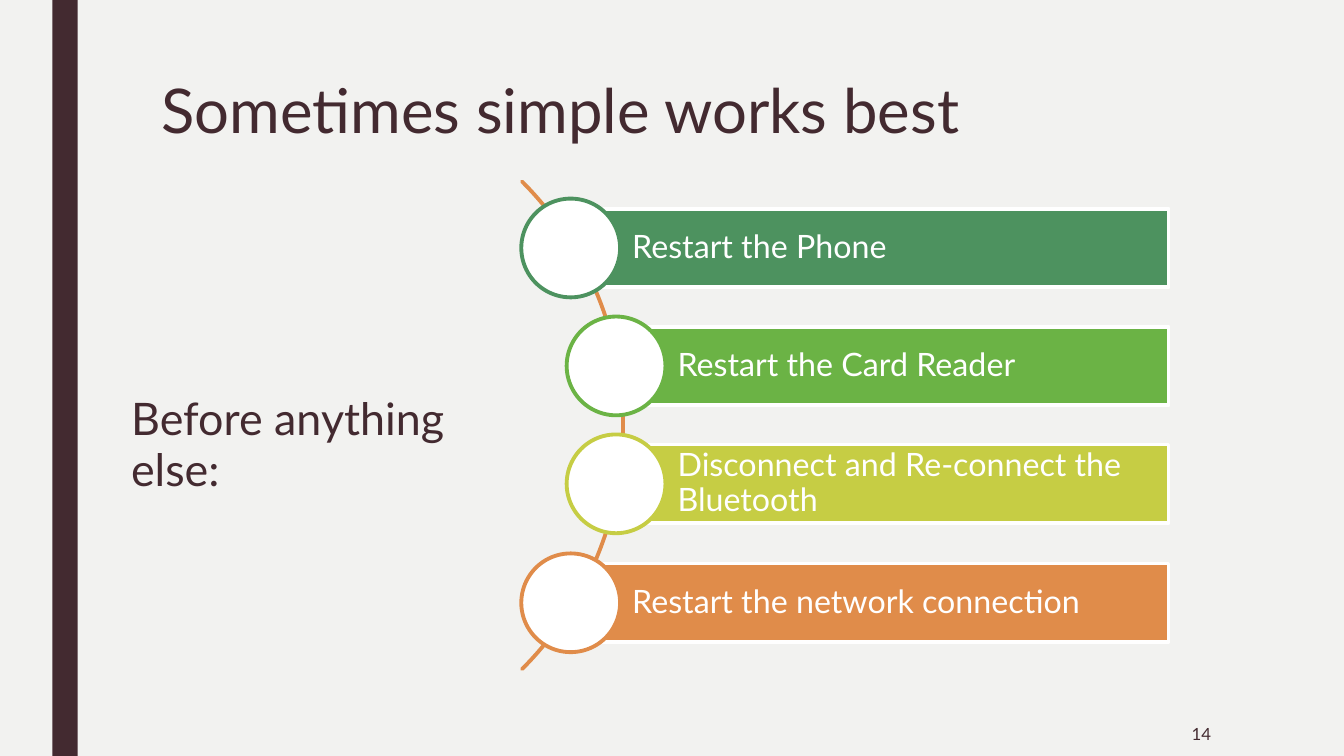
from lxml import etree
from pptx import Presentation
from pptx.dml.color import RGBColor
from pptx.enum.shapes import MSO_SHAPE
from pptx.enum.text import MSO_ANCHOR, MSO_AUTO_SIZE, PP_ALIGN
from pptx.oxml.ns import qn
from pptx.util import Pt

RECT, OVAL, ARC = MSO_SHAPE.RECTANGLE, MSO_SHAPE.OVAL, MSO_SHAPE.BLOCK_ARC
TOP, MIDDLE = MSO_ANCHOR.TOP, MSO_ANCHOR.MIDDLE
LEFT, RIGHT = PP_ALIGN.LEFT, PP_ALIGN.RIGHT
FIXED = MSO_AUTO_SIZE.NONE

PAPER = RGBColor(0xF2, 0xF2, 0xF0)
PLUM = RGBColor(0x43, 0x2A, 0x30)
WHITE = RGBColor(0xFF, 0xFF, 0xFF)
PINE = RGBColor(0x4D, 0x92, 0x5F)
GREEN = RGBColor(0x6B, 0xB3, 0x45)
LIME = RGBColor(0xC6, 0xCD, 0x44)
ORANGE = RGBColor(0xE0, 0x8C, 0x4A)

PX = 9144
STEPS = [
    ("Restart the Phone", PINE, 565),
    ("Restart the Card Reader", GREEN, 610),
    ("Disconnect and Re-connect the Bluetooth", LIME, 610),
    ("Restart the network connection", ORANGE, 565),
]


def assign(target, values):
    for name, value in values.items():
        setattr(target, name, value)


class Deck:
    """Builds one slide in a shared style."""

    def __init__(self, wide, high):
        self.font = "Lato"
        self.stroke = Pt(2.75)
        self.show = Presentation()
        assign(self.show, {"slide_width": wide * PX, "slide_height": high * PX})
        self.slide = self.show.slides.add_slide(self.show.slide_layouts[1])
        fill = self.slide.background.fill
        fill.solid()
        fill.fore_color.rgb = PAPER

    def letter(self, shape, text, size, color, spacing=1.0, align=LEFT,
               anchor=TOP, insets=(10, 5, 10, 5)):
        frame = shape.text_frame
        left, top, right, bottom = [side * PX for side in insets]
        assign(frame, {
            "text": text, "word_wrap": True, "auto_size": FIXED,
            "vertical_anchor": anchor, "margin_left": left, "margin_top": top,
            "margin_right": right, "margin_bottom": bottom,
        })
        para = frame.paragraphs[0]
        assign(para, {"alignment": align, "line_spacing": spacing})
        assign(para.runs[0].font, {"name": self.font, "size": Pt(size)})
        para.runs[0].font.color.rgb = color
        return para

    def holder(self, index, box, text, size, spacing):
        shape = self.slide.placeholders[index]
        left, top, width, height = [side * PX for side in box]
        assign(shape, {"left": left, "top": top, "width": width, "height": height})
        return self.letter(shape, text, size, PLUM, spacing)

    def title(self, box, text):
        self.holder(0, box, text, 44, 0.89)

    def body(self, box, text):
        para = self.holder(1, box, text, 32, 0.94)
        assign(para, {"space_before": Pt(10), "space_after": Pt(2)})
        props = para._p.get_or_add_pPr()
        props.set("marL", "0")
        props.set("indent", "0")
        etree.SubElement(props, qn("a:buNone"))

    def label(self, box, text, size):
        shape = self.slide.shapes.add_textbox(*[side * PX for side in box])
        self.letter(shape, text, size, PLUM, align=RIGHT, anchor=MIDDLE)

    def shape(self, kind, box, fill=None, line=None):
        shape = self.slide.shapes.add_shape(kind, *[side * PX for side in box])
        shape.shadow.inherit = False
        if fill is None:
            shape.fill.background()
        else:
            shape.fill.solid()
            shape.fill.fore_color.rgb = fill
        if line is None:
            shape.line.fill.background()
        else:
            shape.line.color.rgb = line
            shape.line.width = self.stroke
        return shape

    def arc(self, box, angles, color):
        shape = self.shape(ARC, box, line=color)
        for index, value in enumerate(angles):
            shape.adjustments[index] = value

    def step(self, left, top, text, color):
        bar = self.shape(RECT, (left, top, 1159 - left, 78), color, WHITE)
        self.letter(bar, text, 23, WHITE, 0.9, anchor=MIDDLE, insets=(62, 6, 6, 6))
        self.shape(OVAL, (left - 48, top - 10, 98, 98), WHITE, color)

    def save(self):
        self.show.save("out.pptx")


def main():
    deck = Deck(1333, 750)
    deck.shape(RECT, (52, 0, 25, 750), PLUM)
    deck.title((150, 75, 1050, 162), "Sometimes simple works best")
    deck.body((120, 387, 418, 69), "Before anything else:")
    deck.label((1036, 706, 175, 44), "14", 12)
    deck.arc((-66, 80, 684, 684), (189, 27, 0), ORANGE)
    for row, (text, color, left) in enumerate(STEPS):
        deck.step(left, 207 + 352 * row // 3, text, color)
    deck.save()


if __name__ == "__main__":
    main()
